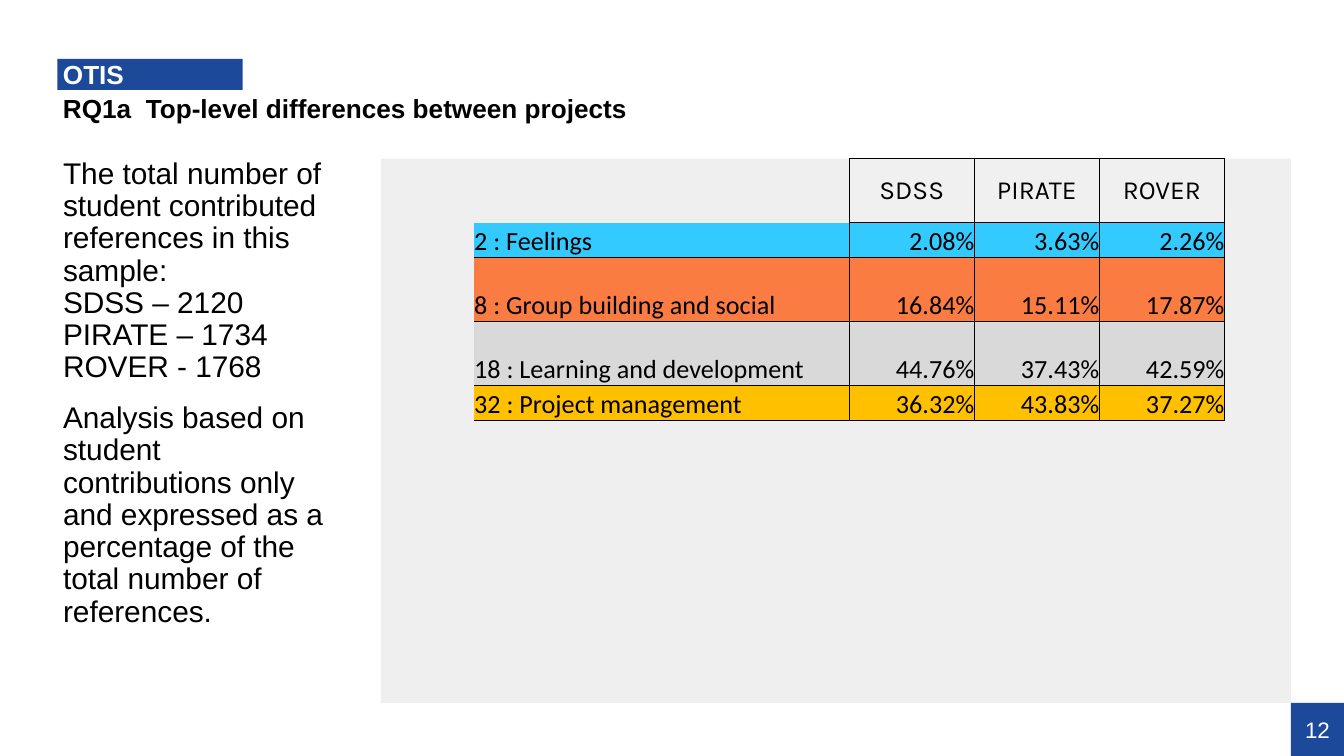
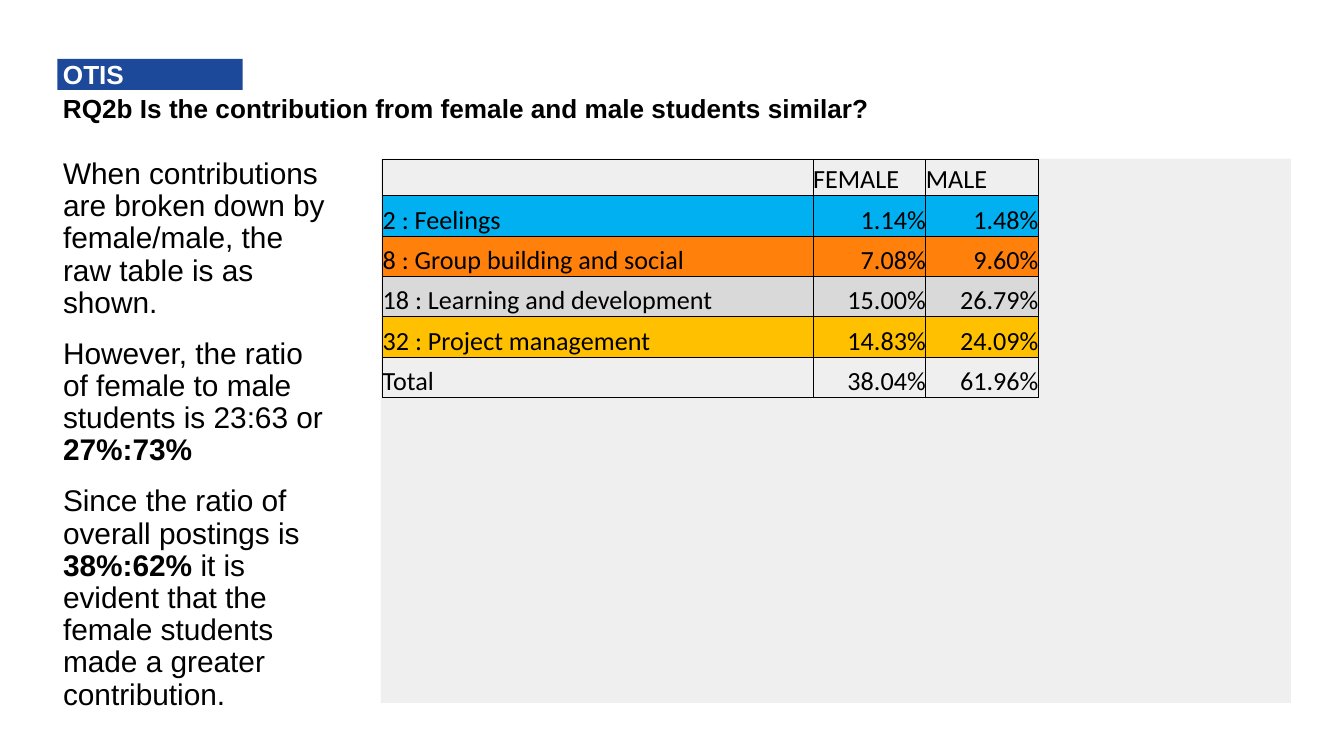
from copy import deepcopy

from lxml import etree
from pptx import Presentation
from pptx.dml.color import RGBColor
from pptx.enum.shapes import MSO_SHAPE
from pptx.enum.text import MSO_ANCHOR, MSO_AUTO_SIZE, PP_ALIGN
from pptx.oxml.ns import qn
from pptx.util import Pt

RECTANGLE = MSO_SHAPE.RECTANGLE
LEFT, CENTER, RIGHT = PP_ALIGN.LEFT, PP_ALIGN.CENTER, PP_ALIGN.RIGHT
TOP, MIDDLE, BOTTOM = MSO_ANCHOR.TOP, MSO_ANCHOR.MIDDLE, MSO_ANCHOR.BOTTOM
NO_AUTOFIT = MSO_AUTO_SIZE.NONE

TWO_CONTENT = 3
BLUE, WHITE, BLACK = "1D499B", "FFFFFF", "000000"
PANEL_GREY, HEADER_GREY = "CCCCCC", "F0F0F0"
LEARNING_GREY, MANAGEMENT_YELLOW = "D9D9D9", "FFC000"
TOPICS = [
    "2 : Feelings",
    "8 : Group building and social",
    "18 : Learning and development",
    "32 : Project management",
]


def color(hex_code):
    return RGBColor.from_string(hex_code)


def apply(target, values):
    for name, value in values.items():
        setattr(target, name, value)


def paint(fill, hex_code):
    if hex_code is None:
        fill.background()
    else:
        fill.solid()
        fill.fore_color.rgb = color(hex_code)


class Deck:
    heading = {"name": "Arial", "size": Pt(14), "bold": True}
    prose = {"name": "Arial", "size": Pt(16), "bold": False}
    page = {"name": "Arial", "size": Pt(12)}
    figures = {"name": "Calibri", "size": Pt(14)}
    projects = {"name": "Karla", "size": Pt(14)}

    def __init__(self):
        self.presentation = Presentation()
        apply(self.presentation, {"slide_width": Pt(720), "slide_height": Pt(405)})
        self.slide = None

    def start_slide(self, question, commentary):
        layout = self.presentation.slide_layouts[TWO_CONTENT]
        self.slide = self.presentation.slides.add_slide(layout)
        tag, body, subtitle = self.slide.placeholders
        self.panel()
        self.place(tag, (30.7, 31.5, 99.3, 16.7), MIDDLE, (3, 1.5))
        paint(tag.fill, BLUE)
        self.paragraphs(tag.text_frame, ["OTIS"], self.heading, WHITE)
        self.place(subtitle, (30.7, 48.2, 625.7, 20.2), MIDDLE, (3, 1.5))
        self.paragraphs(subtitle.text_frame, [question], self.heading, BLACK)
        self.place(body, (33.8, 85, 142, 291.6), TOP, (0, 0))
        self.paragraphs(body.text_frame, commentary, self.prose, BLACK)

    def place(self, holder, box, anchor, inset):
        apply(holder, dict(zip(("left", "top", "width", "height"), map(Pt, box))))
        left, top = map(Pt, inset)
        apply(holder.text_frame, {
            "margin_left": left, "margin_top": top,
            "margin_right": 0, "margin_bottom": 0,
            "vertical_anchor": anchor, "word_wrap": True,
            "auto_size": NO_AUTOFIT,
        })

    def paragraphs(self, frame, texts, font, hex_code):
        for index, parts in enumerate(texts):
            paragraph = frame.paragraphs[0] if index == 0 else frame.add_paragraph()
            properties = paragraph._p.get_or_add_pPr()
            apply(paragraph, {
                "alignment": LEFT, "line_spacing": 0.9,
                "space_before": Pt(10 if index else 0),
            })
            properties.set("marL", "0")
            properties.set("indent", "0")
            etree.SubElement(properties, qn("a:buNone"))
            for part in [parts] if isinstance(parts, str) else parts:
                text, extra = (part, {}) if isinstance(part, str) else part
                self.lines(paragraph, text, {**font, **extra}, hex_code)

    def lines(self, paragraph, text, font, hex_code):
        for index, line in enumerate(text.split("\n")):
            if index:
                paragraph.add_line_break()
            run = paragraph.add_run()
            run.text = line
            apply(run.font, font)
            run.font.color.rgb = color(hex_code)
            if index:
                run._r.getprevious().append(deepcopy(run._r.rPr))

    def block(self, box, hex_code):
        block = self.slide.shapes.add_shape(RECTANGLE, *map(Pt, box))
        block.shadow.inherit = False
        block.line.fill.background()
        paint(block.fill, hex_code)
        return block

    def panel(self):
        panel = self.block((204, 85, 487.6, 291.6), PANEL_GREY)
        tint = panel._element.spPr.find(".//" + qn("a:srgbClr"))
        etree.SubElement(tint, qn("a:alpha"), val="30000")

    def page_number(self, number):
        box = (691.6, 376.6, 28.4, 28.4)
        corner = self.block(box, BLUE)
        self.place(corner, box, MIDDLE, (0, 0))
        paragraph = corner.text_frame.paragraphs[0]
        paragraph.alignment = CENTER
        self.lines(paragraph, number, self.page, WHITE)

    def table(self, corner, widths, heights, rows, fills, header, open_labels=False):
        left, top = corner
        table = self.slide.shapes.add_table(
            len(rows), len(widths), Pt(left), Pt(top), Pt(sum(widths)), Pt(sum(heights))
        ).table
        apply(table, {"first_row": False, "horz_banding": False})
        for column, width in zip(table.columns, widths):
            column.width = Pt(width)
        for r, (values, height, fill) in enumerate(zip(rows, heights, fills)):
            table.rows[r].height = Pt(height)
            for c, value in enumerate(values):
                style = header if r == 0 else {
                    "font": self.figures, "anchor": BOTTOM,
                    "align": RIGHT if c else LEFT,
                }
                edges = "LRTB"
                if open_labels and c == 0:
                    edges = ("R", "RB")[r] if r < 2 else "RTB"
                self.cell(table.cell(r, c), value, style, edges, fill if value else None)

    def cell(self, cell, value, style, edges, fill):
        apply(cell, {
            "margin_left": 0, "margin_right": 0, "margin_top": 0, "margin_bottom": 0,
            "vertical_anchor": style["anchor"],
        })
        for edge in "LRTB":
            border = etree.SubElement(
                cell._tc.get_or_add_tcPr(), qn("a:ln" + edge), w=str(Pt(0.5))
            )
            if edge in edges:
                ink = etree.SubElement(border, qn("a:solidFill"))
                etree.SubElement(ink, qn("a:srgbClr"), val=BLACK)
            else:
                etree.SubElement(border, qn("a:noFill"))
        paint(cell.fill, fill)
        paragraph = cell.text_frame.paragraphs[0]
        paragraph.alignment = style["align"]
        if value:
            self.lines(paragraph, value, style["font"], BLACK)
        else:
            etree.SubElement(paragraph._p, qn("a:endParaRPr"), sz="1400")


def project_slide(deck):
    deck.start_slide("RQ1a  Top-level differences between projects", [
        "The total number of student contributed references in this sample:\n"
        "SDSS – 2120\nPIRATE – 1734\nROVER - 1768",
        "Analysis based on student contributions only and expressed as a "
        "percentage of the total number of references.",
    ])
    deck.page_number("12")
    shares = [
        ("2.08%", "3.63%", "2.26%"),
        ("16.84%", "15.11%", "17.87%"),
        ("44.76%", "37.43%", "42.59%"),
        ("36.32%", "43.83%", "37.27%"),
    ]
    deck.table(
        (254, 85), [201] + [67] * 3, [34.3, 18.8, 34.3, 34.3, 18.8],
        [("", "SDSS", "PIRATE", "ROVER")]
        + [(topic, *share) for topic, share in zip(TOPICS, shares)],
        [HEADER_GREY, "33CAFF", "FB7C43", LEARNING_GREY, MANAGEMENT_YELLOW],
        {"font": deck.projects, "anchor": MIDDLE, "align": CENTER},
        open_labels=True,
    )


def gender_slide(deck):
    strong = {"bold": True}
    deck.start_slide("RQ2b Is the contribution from female and male students similar?", [
        "When contributions are broken down by female/male, the raw table is as shown.",
        ["However, the ratio of female to male students is 23:63 or ",
         ("27%:73%", strong)],
        ["Since the ratio of overall postings is ", ("38%:62% ", strong),
         "it is evident that the female students made a greater contribution."],
    ])
    shares = [
        ("1.14%", "1.48%"),
        ("7.08%", "9.60%"),
        ("15.00%", "26.79%"),
        ("14.83%", "24.09%"),
        ("38.04%", "61.96%"),
    ]
    deck.table(
        (205, 85.5), [230.6] + [60.4] * 2, [19.4] + [21.6] * 5,
        [("", "FEMALE", "MALE")]
        + [(topic, *share) for topic, share in zip(TOPICS + ["Total"], shares)],
        [None, "00B0F0", "FF800A", LEARNING_GREY, MANAGEMENT_YELLOW, None],
        {"font": deck.figures, "anchor": BOTTOM, "align": LEFT},
    )


def main():
    deck = Deck()
    project_slide(deck)
    gender_slide(deck)
    deck.presentation.save("out.pptx")


if __name__ == "__main__":
    main()
